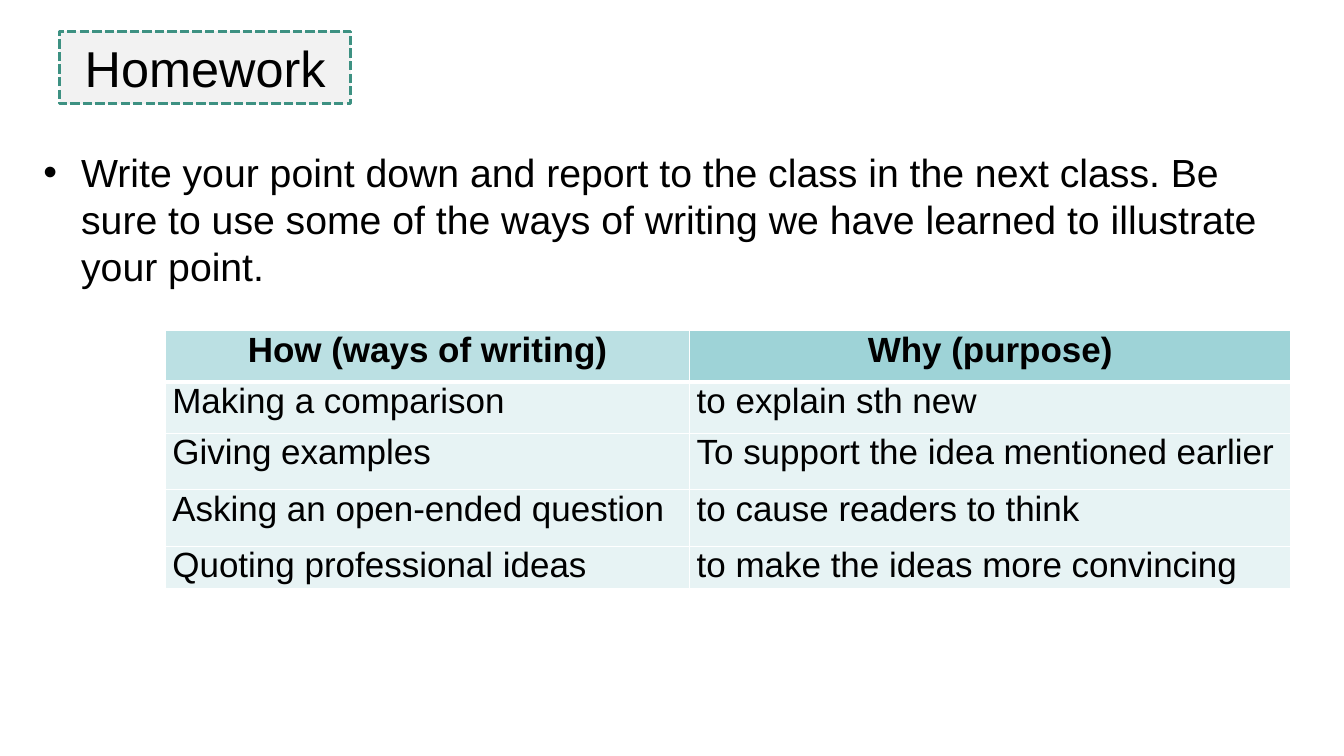
from dataclasses import dataclass

from lxml import etree
from pptx import Presentation
from pptx.dml.color import RGBColor
from pptx.enum.dml import MSO_LINE
from pptx.enum.text import MSO_ANCHOR, MSO_AUTO_SIZE, PP_ALIGN
from pptx.oxml.ns import qn
from pptx.util import Inches, Pt

DASH = MSO_LINE.SQUARE_DOT
MIDDLE, TOP = MSO_ANCHOR.MIDDLE, MSO_ANCHOR.TOP
NO_FIT = MSO_AUTO_SIZE.NONE
LEFT, CENTER = PP_ALIGN.LEFT, PP_ALIGN.CENTER


@dataclass(frozen=True)
class Theme:
    font: str = "Arial"
    ink: str = "000000"
    panel: str = "F2F2F2"
    edge: str = "3D9182"
    rule: str = "FFFFFF"
    heads: tuple = ("BBE0E3", "9ED3D7")
    row: str = "E7F3F4"
    title: int = 36
    body: int = 28
    cell: int = 25


THEME = Theme()
TASK = ("Write your point down and report to the class in the next class. "
        "Be sure to use some of the ways of writing we have learned to "
        "illustrate your point.")
WAYS = [
    ("How (ways of writing)", "Why (purpose)"),
    ("Making a comparison", "to explain sth new"),
    ("Giving examples", "To support the idea mentioned earlier"),
    ("Asking an open-ended question", "to cause readers to think"),
    ("Quoting professional ideas", "to make the ideas more convincing"),
]
COLS = (5.2, 5.96)
ROWS = (0.51, 0.51, 0.56, 0.56, 0.42)


def rgb(code):
    return RGBColor.from_string(code)


def write(frame, text, size, align, bold=False):
    frame.text = text
    para = frame.paragraphs[0]
    para.alignment = align
    font = para.font
    font.name, font.size, font.bold = THEME.font, Pt(size), bold
    font.color.rgb = rgb(THEME.ink)


def place(shape, box):
    shape.left, shape.top, shape.width, shape.height = map(Inches, box)


def add_title(slide, box):
    title = slide.shapes.title
    place(title, box)
    title.fill.solid()
    title.fill.fore_color.rgb = rgb(THEME.panel)
    title.line.color.rgb = rgb(THEME.edge)
    title.line.width = Pt(2.25)
    title.line.dash_style = DASH
    frame = title.text_frame
    frame.auto_size, frame.vertical_anchor = NO_FIT, MIDDLE
    write(frame, "Homework", THEME.title, CENTER)


def add_task(slide, box):
    body = slide.placeholders[1]
    place(body, box)
    frame = body.text_frame
    frame.auto_size, frame.vertical_anchor = NO_FIT, TOP
    write(frame, TASK, THEME.body, LEFT)


def rule_cell(cell, base):
    """Draw the cell's four borders; base is the lower one's width in points."""
    props = cell._tc.get_or_add_tcPr()
    sides = (("lnL", 1), ("lnR", 1), ("lnT", 1), ("lnB", base))
    for spot, (side, width) in enumerate(sides):
        line = etree.Element(qn(f"a:{side}"), w=str(Pt(width)))
        fill = etree.SubElement(line, qn("a:solidFill"))
        etree.SubElement(fill, qn("a:srgbClr"), val=THEME.rule)
        props.insert(spot, line)


def add_ways(slide, box):
    grid = slide.shapes.add_table(len(WAYS), len(COLS), *map(Inches, box)).table
    for col, width in zip(grid.columns, COLS):
        col.width = Inches(width)
    for row, height in zip(grid.rows, ROWS):
        row.height = Inches(height)
    for r, texts in enumerate(WAYS):
        head = r == 0
        for c, text in enumerate(texts):
            cell = grid.cell(r, c)
            cell.margin_left = cell.margin_right = Inches(0.07)
            cell.margin_top = cell.margin_bottom = 0
            cell.fill.solid()
            cell.fill.fore_color.rgb = rgb(THEME.heads[c] if head else THEME.row)
            write(cell.text_frame, text, THEME.cell,
                  CENTER if head else LEFT, head)
            rule_cell(cell, 3 if head else 1)
            if r == 1:
                cell._tc.tcPr.find(qn("a:lnT")).set("w", str(Pt(3)))


def main():
    deck = Presentation()
    deck.slide_width, deck.slide_height = Inches(13.33), Inches(7.5)
    slide = deck.slides.add_slide(deck.slide_layouts[1])
    add_task(slide, (0.33, 1.42, 12.47, 1.63))
    add_ways(slide, (1.64, 3.28, sum(COLS), sum(ROWS)))
    add_title(slide, (0.59, 0.31, 2.89, 0.72))
    deck.save("out.pptx")


if __name__ == "__main__":
    main()
